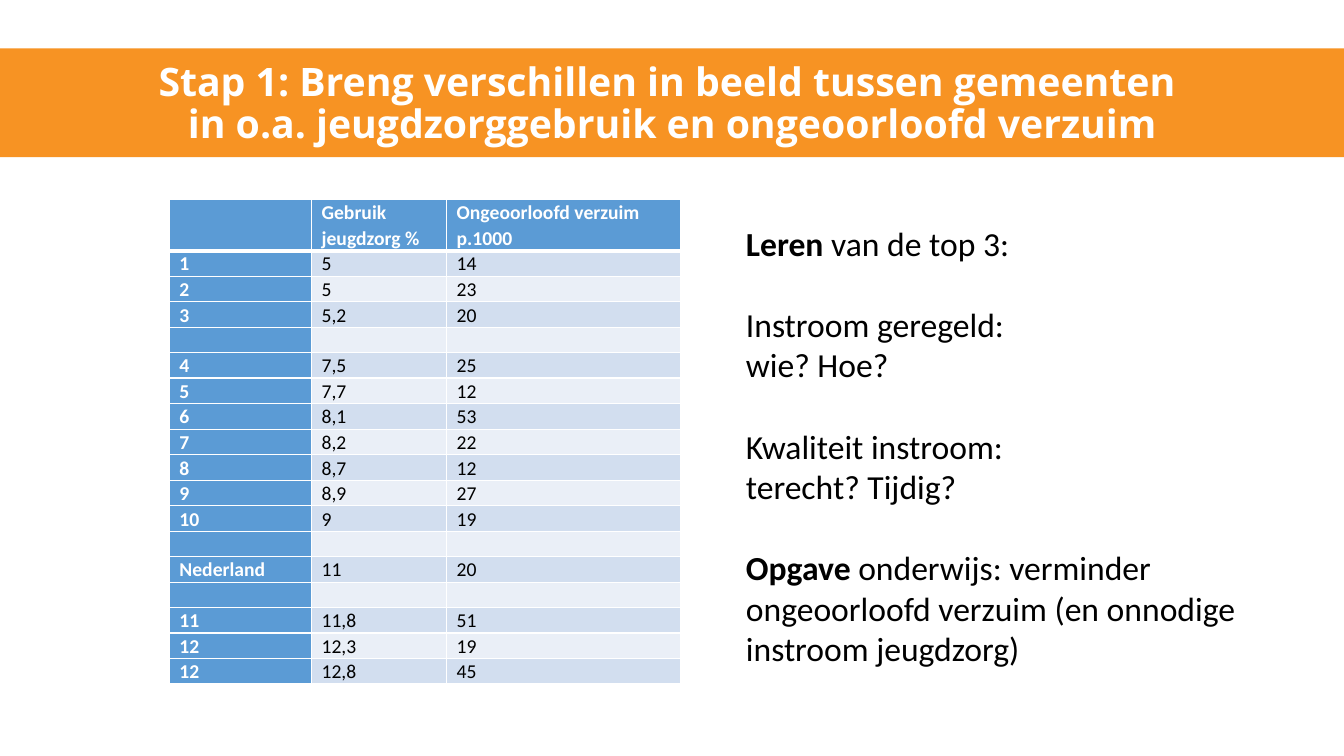
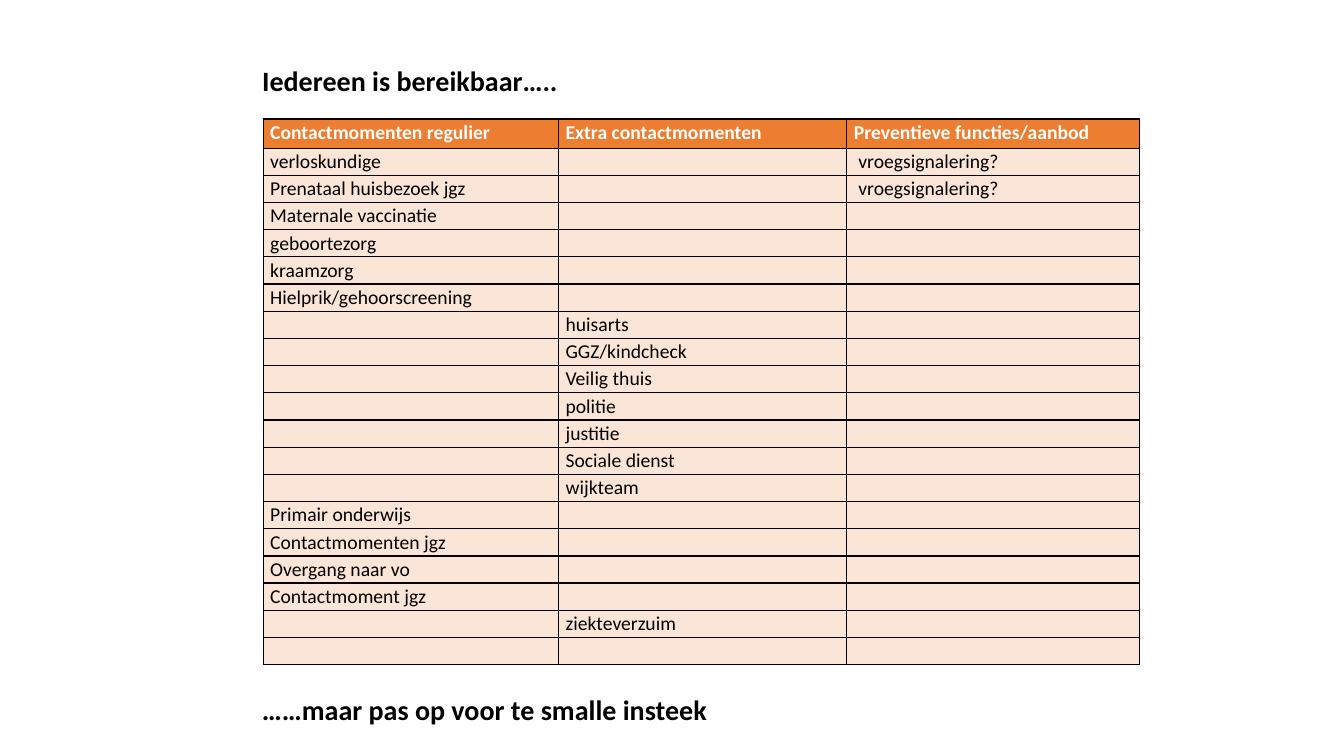
from lxml import etree
from pptx import Presentation
from pptx.dml.color import RGBColor
from pptx.enum.shapes import MSO_SHAPE
from pptx.enum.text import MSO_ANCHOR, MSO_AUTO_SIZE, PP_ALIGN
from pptx.oxml.ns import qn
from pptx.util import Inches, Pt

COLORS = {
    "white": "FFFFFF", "black": "000000", "band": "F79323",
    "blue": "5B9BD5", "blue_mid": "D2DEEF", "blue_light": "EAEFF7",
    "orange": "ED7D31", "peach": "FBE5D6",
}
BODY_FONT, TITLE_FONT = "Calibri", "Open Sans"
SLIDE_W, SLIDE_H = 13.33, 7.5

STEP_TITLE = ("Stap 1: Breng verschillen in beeld tussen gemeenten \v"
              "in o.a. jeugdzorggebruik en ongeoorloofd verzuim")
MUNICIPALITIES = [
    ("", "Gebruik jeugdzorg %", "Ongeoorloofd verzuim p.1000"),
    ("1", "5", "14"),
    ("2", "5", "23"),
    ("3", "5,2", "20"),
    ("", "", ""),
    ("4", "7,5", "25"),
    ("5", "7,7", "12"),
    ("6", "8,1", "53"),
    ("7", "8,2", "22"),
    ("8", "8,7", "12"),
    ("9", "8,9", "27"),
    ("10", "9", "19"),
    ("", "", ""),
    ("Nederland", "11", "20"),
    ("", "", ""),
    ("11", "11,8", "51"),
    ("12", "12,3", "19"),
    ("12", "12,8", "45"),
]
LESSONS = [  # bold lead, remaining lines
    ("Leren", [" van de top 3:"]),
    ("", ["Instroom geregeld: ", "wie? Hoe?"]),
    ("", ["Kwaliteit instroom: ", "terecht? Tijdig?"]),
    ("Opgave", [" onderwijs: verminder ongeoorloofd verzuim "
                "(en onnodige instroom jeugdzorg)"]),
]

REACH_TITLE = "Iedereen is bereikbaar….."
REACH_WARNING = "……maar pas op voor te smalle insteek"
CONTACTS = [
    ("Contactmomenten regulier", "Extra contactmomenten", "Preventieve functies/aanbod"),
    ("verloskundige", "", " vroegsignalering?"),
    ("Prenataal huisbezoek jgz", "", " vroegsignalering?"),
    ("Maternale vaccinatie", "", ""),
    ("geboortezorg", "", ""),
    ("kraamzorg", "", ""),
    ("Hielprik/gehoorscreening", "", ""),
    ("", "huisarts", ""),
    ("", "GGZ/kindcheck", ""),
    ("", "Veilig thuis", ""),
    ("", "politie", ""),
    ("", "justitie", ""),
    ("", "Sociale dienst", ""),
    ("", "wijkteam", ""),
    ("Primair onderwijs", "", ""),
    ("Contactmomenten jgz", "", ""),
    ("Overgang naar vo", "", ""),
    ("Contactmoment jgz", "", ""),
    ("", "ziekteverzuim", ""),
    ("", "", ""),
]


def rgb(name):
    return RGBColor.from_string(COLORS[name])


def style_run(r, size, color="black", bold=False, font=BODY_FONT):
    r.font.size, r.font.bold, r.font.name = Pt(size), bold, font
    r.font.color.rgb = rgb(color)


def set_text(sp, text, align=PP_ALIGN.LEFT, **run_style):
    tf = sp.text_frame
    tf.word_wrap, tf.auto_size = True, MSO_AUTO_SIZE.NONE
    p = tf.paragraphs[0]
    p.text, p.alignment = text, align
    for r in p.runs:
        style_run(r, **run_style)
    return tf


def add_title_slide(prs, title, box, **text_style):
    s = prs.slides.add_slide(prs.slide_layouts[5])
    sp = s.shapes.title
    sp.left, sp.top, sp.width, sp.height = (Inches(v) for v in box)
    set_text(sp, title, **text_style).vertical_anchor = MSO_ANCHOR.MIDDLE
    return s


def set_borders(cell, color, bottom=1):
    tc_pr = cell._tc.get_or_add_tcPr()
    for side, width in (("L", 1), ("R", 1), ("T", 1), ("B", bottom)):
        ln = etree.SubElement(tc_pr, qn(f"a:ln{side}"), w=str(Pt(width)))
        fill = etree.SubElement(ln, qn("a:solidFill"))
        etree.SubElement(fill, qn("a:srgbClr"), val=COLORS[color])


def add_grid(s, rows, at, col_widths, header_h, row_h, inset, border,
             header_bottom, look):
    """look(row, col) gives the fill, text colour and boldness of a cell."""
    left, top = at
    height = header_h + row_h * (len(rows) - 1)
    table = s.shapes.add_table(len(rows), len(col_widths), Inches(left), Inches(top),
                               Inches(sum(col_widths)), Inches(height)).table
    for col, width in zip(table.columns, col_widths):
        col.width = Inches(width)
    for i, values in enumerate(rows):
        table.rows[i].height = Inches(row_h if i else header_h)
        for j, value in enumerate(values):
            cell = table.cell(i, j)
            fill, color, bold = look(i, j)
            cell.margin_left = cell.margin_right = Inches(inset)
            cell.margin_top = cell.margin_bottom = 0
            set_borders(cell, border, 1 if i else header_bottom)
            cell.fill.solid()
            cell.fill.fore_color.rgb = rgb(fill)
            p = cell.text_frame.paragraphs[0]
            p.text, p.line_spacing, p.space_after = value, 1.07, Pt(8)
            for r in p.runs:
                style_run(r, 14, color, bold)
            if not value:  # keeps empty rows as low as the others
                etree.SubElement(p._p, qn("a:endParaRPr"), sz="1400")


def municipality_look(row, col):
    if row == 0 or col == 0:
        return "blue", "white", True
    return ("blue_mid" if row % 2 else "blue_light"), "black", False


def contact_look(row, col):
    return ("peach", "black", False) if row else ("orange", "white", True)


def add_lessons(s):
    tf = s.shapes.add_textbox(Inches(7.3), Inches(2.16), Inches(5.4),
                              Inches(4.54)).text_frame
    tf.word_wrap = True
    for i, (lead, lines) in enumerate(LESSONS):
        p = tf.add_paragraph() if i else tf.paragraphs[0]
        p.space_before = Pt(29.3 if i else 0)
        if lead:
            r = p.add_run()
            r.text = lead
            style_run(r, 24, bold=True)
        for k, line in enumerate(lines):
            if k:
                p.add_line_break()
            r = p.add_run()
            r.text = line
            style_run(r, 24)


def build_step_slide(prs):
    s = add_title_slide(prs, STEP_TITLE, (0, 0.61, SLIDE_W, 0.86), align=PP_ALIGN.CENTER,
                        size=28, color="white", bold=True, font=TITLE_FONT)
    s.shapes.title.text_frame.paragraphs[0].line_spacing = 0.9
    band = s.shapes.add_shape(MSO_SHAPE.RECTANGLE, 0, Inches(0.48),
                              Inches(SLIDE_W), Inches(1.08))
    band.shadow.inherit = False
    band.fill.solid()
    band.fill.fore_color.rgb = rgb("band")
    band.line.fill.background()
    s.shapes.title._element.addprevious(band._element)
    add_grid(s, MUNICIPALITIES, (1.68, 1.98), (1.41, 1.34, 2.32), 0.4, 0.25,
             0.1, "white", 3, municipality_look)
    add_lessons(s)


def build_reach_slide(prs):
    line_style = dict(size=20, bold=True)
    s = add_title_slide(prs, REACH_TITLE, (2.5, 0.58, 6.67, 0.44), **line_style)
    add_grid(s, CONTACTS, (2.61, 1.18), (2.93, 2.86, 2.9), 0.29, 0.27,
             0.07, "black", 1, contact_look)
    warning = s.shapes.add_textbox(Inches(2.5), Inches(6.82), Inches(6.67), Inches(0.44))
    set_text(warning, REACH_WARNING, **line_style)


def main():
    prs = Presentation()
    prs.slide_width, prs.slide_height = Inches(SLIDE_W), Inches(SLIDE_H)
    build_step_slide(prs)
    build_reach_slide(prs)
    prs.save("out.pptx")


if __name__ == "__main__":
    main()
